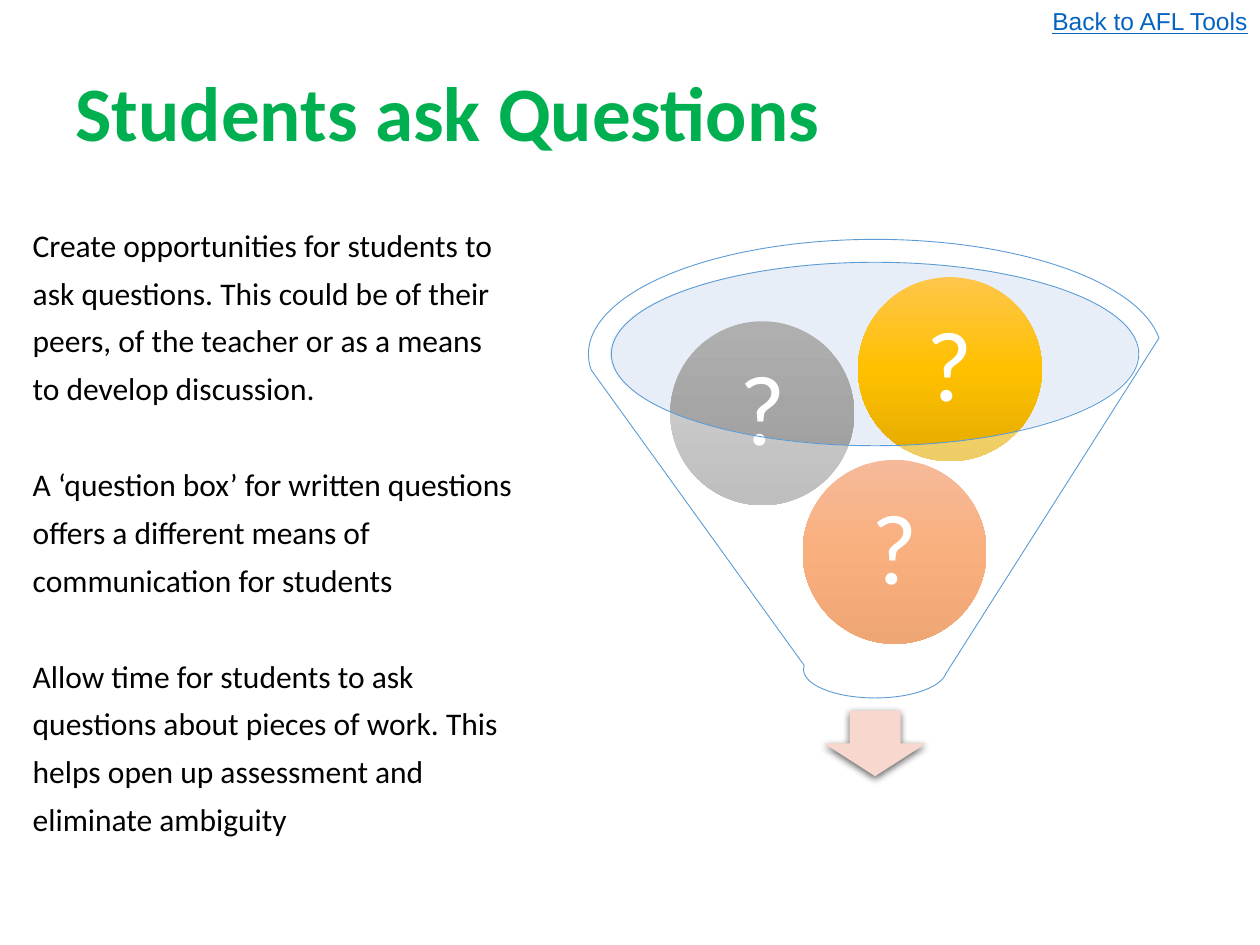
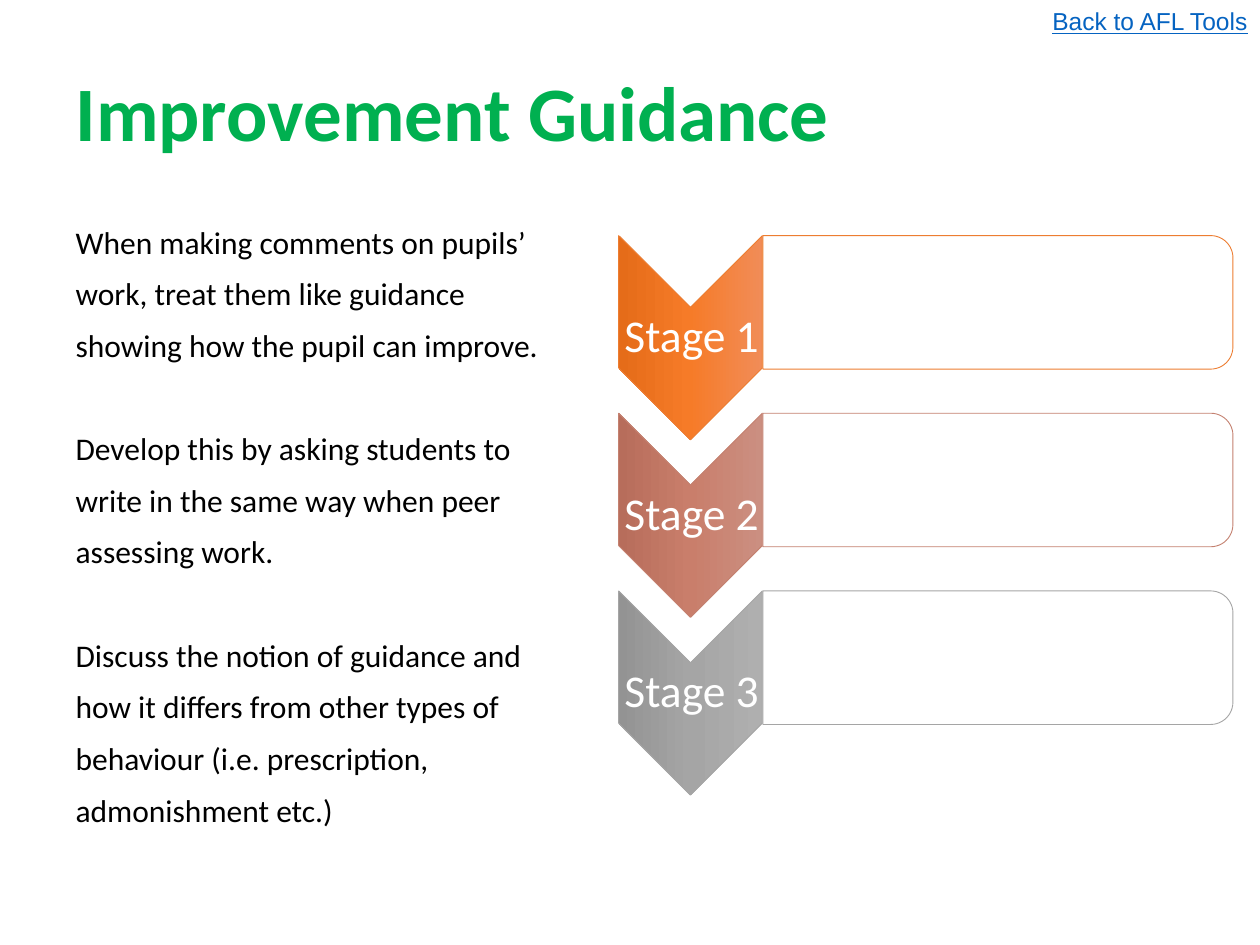
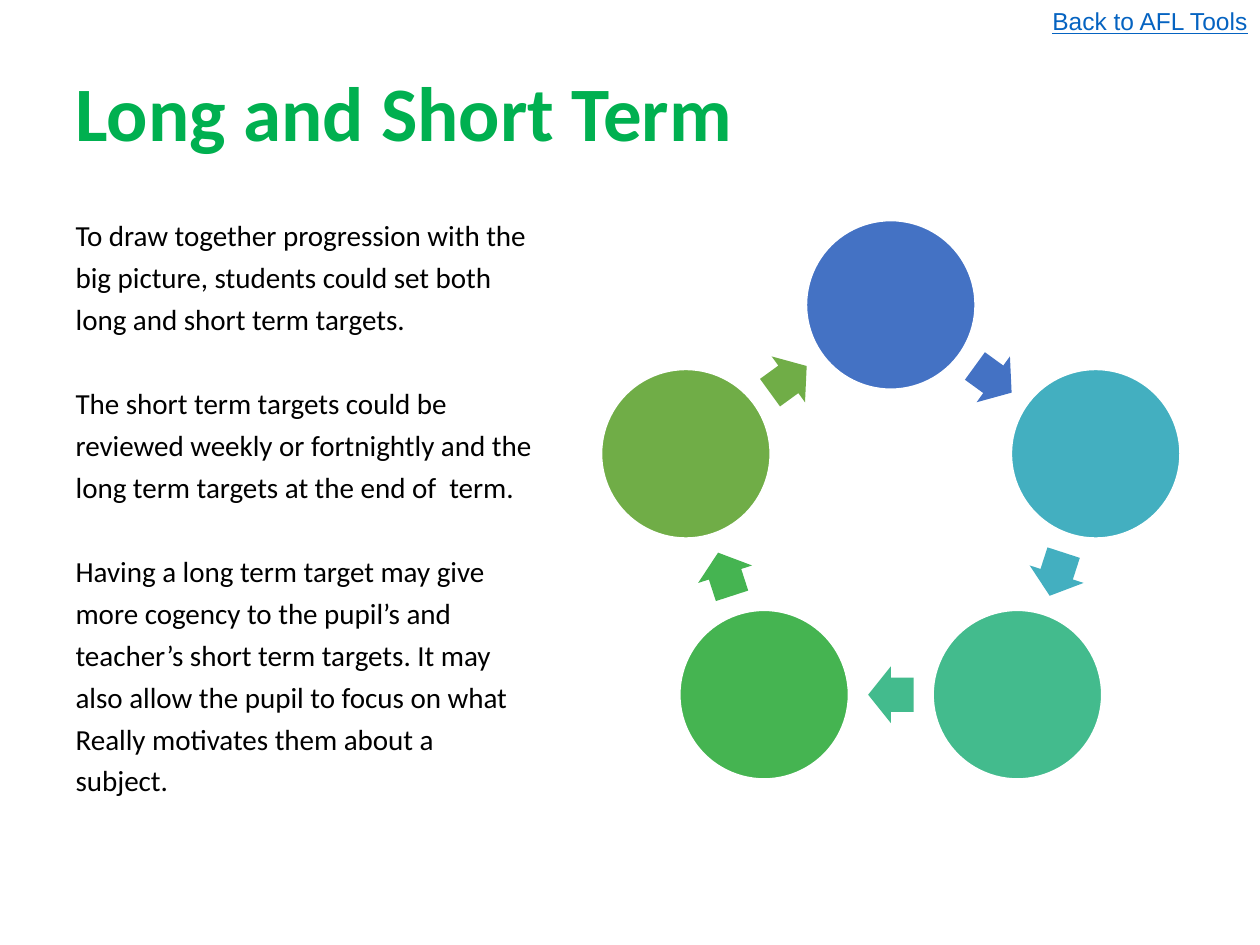
from copy import deepcopy
from dataclasses import dataclass
from math import cos, pi, sin

from lxml import etree
from pptx import Presentation
from pptx.dml.color import RGBColor
from pptx.enum.shapes import MSO_SHAPE
from pptx.enum.text import MSO_ANCHOR, MSO_AUTO_SIZE, PP_ALIGN
from pptx.oxml.ns import qn
from pptx.util import Inches, Pt

ELLIPSE, FUNNEL = MSO_SHAPE.OVAL, MSO_SHAPE.FUNNEL
DOWN_ARROW, RIGHT_ARROW = MSO_SHAPE.DOWN_ARROW, MSO_SHAPE.RIGHT_ARROW
CHEVRON, BAR = MSO_SHAPE.CHEVRON, MSO_SHAPE.ROUND_2_SAME_RECTANGLE
LEFT, CENTER, RIGHT = PP_ALIGN.LEFT, PP_ALIGN.CENTER, PP_ALIGN.RIGHT
TOP, MIDDLE = MSO_ANCHOR.TOP, MSO_ANCHOR.MIDDLE


@dataclass(frozen=True)
class Theme:
    title: str = "00B050"
    text: str = "000000"
    link: str = "0563C1"
    white: str = "FFFFFF"
    rim: str = "5B9BD5"
    mouth: str = "C4D5EB"
    drop: str = "F8D7CE"
    orange: tuple = ("F18C57", "F67B28", "E56C19")
    rose: tuple = ("CB8F81", "C97E6B", "B76D5B")
    grey: tuple = ("AFAFAF", "A5A5A5", "939393")
    gold: tuple = ("FFC64B", "FFC000", "E3AB00")
    font: str = "Calibri"
    link_font: str = "Arial"
    title_size: float = 44
    link_size: float = 14
    mark_size: float = 57
    stage_size: float = 26


T = Theme()
BACK = "Back to AFL Tools"
TITLE_BOX = (0.5, 0.3, 9, 1.25)
BACK_BOX = (7.97, 0, 2.03, 0.34)
LINE_HEIGHT = 1.22
SPACE_BEFORE = 10

QUESTIONS = {
    "title": "Students ask Questions",
    "box": (0.16, 1.8, 4.42, 4.95), "size": 18, "spacing": 0.8,
    "groups": [
        ["Create opportunities for students to",
         "ask questions. This could be of their",
         "peers, of the teacher or as a means",
         "to develop discussion."],
        ["A ‘question box’ for written questions",
         "offers a different means of",
         "communication for students"],
        ["Allow time for students to ask",
         "questions about pieces of work. This",
         "helps open up assessment and",
         "eliminate ambiguity"],
    ],
}
GUIDANCE = {
    "title": "Improvement Guidance",
    "box": (0.5, 1.75, 4.42, 4.95), "size": 18, "spacing": 0.9,
    "groups": [
        ["When making comments on pupils’",
         "work, treat them like guidance",
         "showing how the pupil can improve."],
        ["Develop this by asking students to",
         "write in the same way when peer",
         "assessing work."],
        ["Discuss the notion of guidance and",
         "how it differs from other types of",
         "behaviour (i.e. prescription,",
         "admonishment etc.)"],
    ],
}
TERMS = {
    "title": "Long and Short Term",
    "box": (0.5, 1.75, 4.42, 4.95), "size": 16.6, "spacing": 0.7,
    "groups": [
        ["To draw together progression with the",
         "big picture, students could set both",
         "long and short term targets."],
        ["The short term targets could be",
         "reviewed weekly or fortnightly and the",
         "long term targets at the end of  term."],
        ["Having a long term target may give",
         "more cogency to the pupil’s and",
         "teacher’s short term targets. It may",
         "also allow the pupil to focus on what",
         "Really motivates them about a",
         "subject."],
    ],
}
BALLS = [(7.1, 4.38, T.orange), (6.05, 3.28, T.grey), (7.54, 2.93, T.gold)]
STAGES = [("Stage 1", T.orange, "ED7D31"),
          ("Stage 2", T.rose, "C48170"),
          ("Stage 3", T.grey, "A5A5A5")]
CYCLE = ["4472C4", "43AFC0", "43BB8D", "45B451", "70AD47"]


def rgb(color):
    return RGBColor.from_string(color)


def place(sp, box):
    for name, value in zip(("left", "top", "width", "height"), box):
        setattr(sp, name, Inches(value))


def around(cx, cy, w, h):
    return cx - w / 2, cy - h / 2, w, h


def write(p, text, size, color, align=LEFT, spacing=None, font=T.font, **styles):
    p.alignment = align
    p.line_spacing = spacing
    r = p.add_run()
    r.text = text
    formats = {"size": Pt(size), "name": font, **styles}
    for name, value in formats.items():
        setattr(r.font, name, value)
    r.font.color.rgb = rgb(color)


def set_frame(tf, anchor, inset=None, auto_size=MSO_AUTO_SIZE.NONE):
    tf.word_wrap = True
    tf.auto_size = auto_size
    tf.vertical_anchor = anchor
    if inset is not None:
        for side in ("left", "top", "right", "bottom"):
            setattr(tf, f"margin_{side}", Inches(inset))


def set_alpha(sp, percent):
    color = sp.element.spPr.find(qn("a:solidFill"))[0]
    etree.SubElement(color, qn("a:alpha"), val=str(percent * 1000))


def set_gradient(sp, colors):
    """Fill from top to bottom with three evenly spaced colours."""
    sp.fill.gradient()
    sp.fill.gradient_angle = 270
    stops = sp.element.spPr.find(qn("a:gradFill")).find(qn("a:gsLst"))
    stops.append(deepcopy(stops[0]))
    for i, (stop, color) in enumerate(zip(sp.fill.gradient_stops, colors)):
        stop.position = i / 2
        stop.color.rgb = rgb(color)


def add_shape(slide, kind, box, fill, alpha=None, line=None, width=0.5, rotation=0):
    sp = slide.shapes.add_shape(kind, *map(Inches, box))
    sp.shadow.inherit = False
    sp.rotation = rotation
    if isinstance(fill, tuple):
        set_gradient(sp, fill)
    else:
        sp.fill.solid()
        sp.fill.fore_color.rgb = rgb(fill)
        if alpha is not None:
            set_alpha(sp, alpha)
    if line:
        sp.line.color.rgb = rgb(line)
        sp.line.width = Pt(width)
    else:
        sp.line.fill.background()
    return sp


def add_drop_shadow(sp):
    effects = sp.element.spPr.find(qn("a:effectLst"))
    shadow = etree.SubElement(effects, qn("a:outerShdw"), blurRad=str(Pt(4.5)),
                              dist=str(Pt(1.5)), dir="5400000", rotWithShape="0")
    color = etree.SubElement(shadow, qn("a:srgbClr"), val=T.text)
    etree.SubElement(color, qn("a:alpha"), val="63000")


def fill_body(body, content):
    """Write one paragraph per line, with a line's gap before each new group."""
    place(body, content["box"])
    tf = body.text_frame
    set_frame(tf, TOP)
    size, spacing = content["size"], content["spacing"]
    group_gap = 2 * SPACE_BEFORE + LINE_HEIGHT * size * spacing
    p = tf.paragraphs[0]
    for g, lines in enumerate(content["groups"]):
        for i, line in enumerate(lines):
            if g or i:
                p = tf.add_paragraph()
            write(p, line, size, T.text, spacing=spacing)
            p.space_before = Pt(group_gap if g and not i else SPACE_BEFORE)
            pPr = p._p.get_or_add_pPr()
            pPr.set("marL", str(Inches(0.25)))
            pPr.set("indent", str(Inches(-0.25)))
            etree.SubElement(pPr, qn("a:buNone"))


def add_slide(prs, content):
    slide = prs.slides.add_slide(prs.slide_layouts[1])
    title, body = slide.placeholders
    place(title, TITLE_BOX)
    set_frame(title.text_frame, MIDDLE)
    write(title.text_frame.paragraphs[0], content["title"], T.title_size, T.title,
          spacing=0.9, bold=True)
    fill_body(body, content)
    back = slide.shapes.add_textbox(*map(Inches, BACK_BOX))
    set_frame(back.text_frame, TOP, auto_size=MSO_AUTO_SIZE.SHAPE_TO_FIT_TEXT)
    write(back.text_frame.paragraphs[0], BACK, T.link_size, T.link, RIGHT,
          font=T.link_font, underline=True)
    return slide


def draw_funnel(slide):
    add_shape(slide, ELLIPSE, (4.84, 2.08, 4.19, 1.45), T.mouth, alpha=40)
    add_drop_shadow(add_shape(slide, DOWN_ARROW, (6.54, 5.64, 0.81, 0.52), T.drop))
    for cx, cy, colors in BALLS:
        ball = add_shape(slide, ELLIPSE, around(cx, cy, 1.46, 1.46), colors)
        set_frame(ball.text_frame, MIDDLE, 0.08)
        write(ball.text_frame.paragraphs[0], "?", T.mark_size, T.white, CENTER, 0.9)
    add_shape(slide, FUNNEL, (4.67, 1.9, 4.55, 3.64), T.white, alpha=40, line=T.rim)


def draw_stages(slide, cx=5.48, first_y=2.68, pitch=1.41):
    for i, (name, colors, line) in enumerate(STAGES):
        cy = first_y + i * pitch
        add_shape(slide, CHEVRON, around(cx, cy, 1.62, 1.14), colors,
                  line=line, rotation=90)
        label = slide.shapes.add_textbox(*map(Inches, around(cx + 0.01, cy, 1.14, 0.49)))
        set_frame(label.text_frame, MIDDLE, 0.02)
        write(label.text_frame.paragraphs[0], name, T.stage_size, T.white, CENTER, 0.9)
        add_shape(slide, BAR, around(cx + 2.44, cy - 0.28, 1.06, 3.73), T.white,
                  alpha=90, line=line, rotation=90)


def draw_cycle(slide, cx=7.07, cy=4.13, radius=1.71):
    step = 2 * pi / len(CYCLE)
    arrow_radius = radius * cos(step / 2)

    def on_ring(r, angle):
        return cx + r * sin(angle), cy - r * cos(angle)

    for i, color in enumerate(CYCLE):
        angle = i * step
        add_shape(slide, ELLIPSE, around(*on_ring(radius, angle), 1.34, 1.34), color,
                  line=T.white, width=1)
        middle = on_ring(arrow_radius, angle + step / 2)
        arrow = add_shape(slide, RIGHT_ARROW, around(*middle, 0.36, 0.45), color,
                          rotation=(i + 0.5) * 360 / len(CYCLE))
        arrow.adjustments[0] = 0.6
        arrow.adjustments[1] = 0.5


def main():
    prs = Presentation()
    prs.slide_width, prs.slide_height = Inches(10), Inches(7.5)
    for content, draw in ((QUESTIONS, draw_funnel), (GUIDANCE, draw_stages),
                          (TERMS, draw_cycle)):
        draw(add_slide(prs, content))
    prs.save("out.pptx")


if __name__ == "__main__":
    main()
